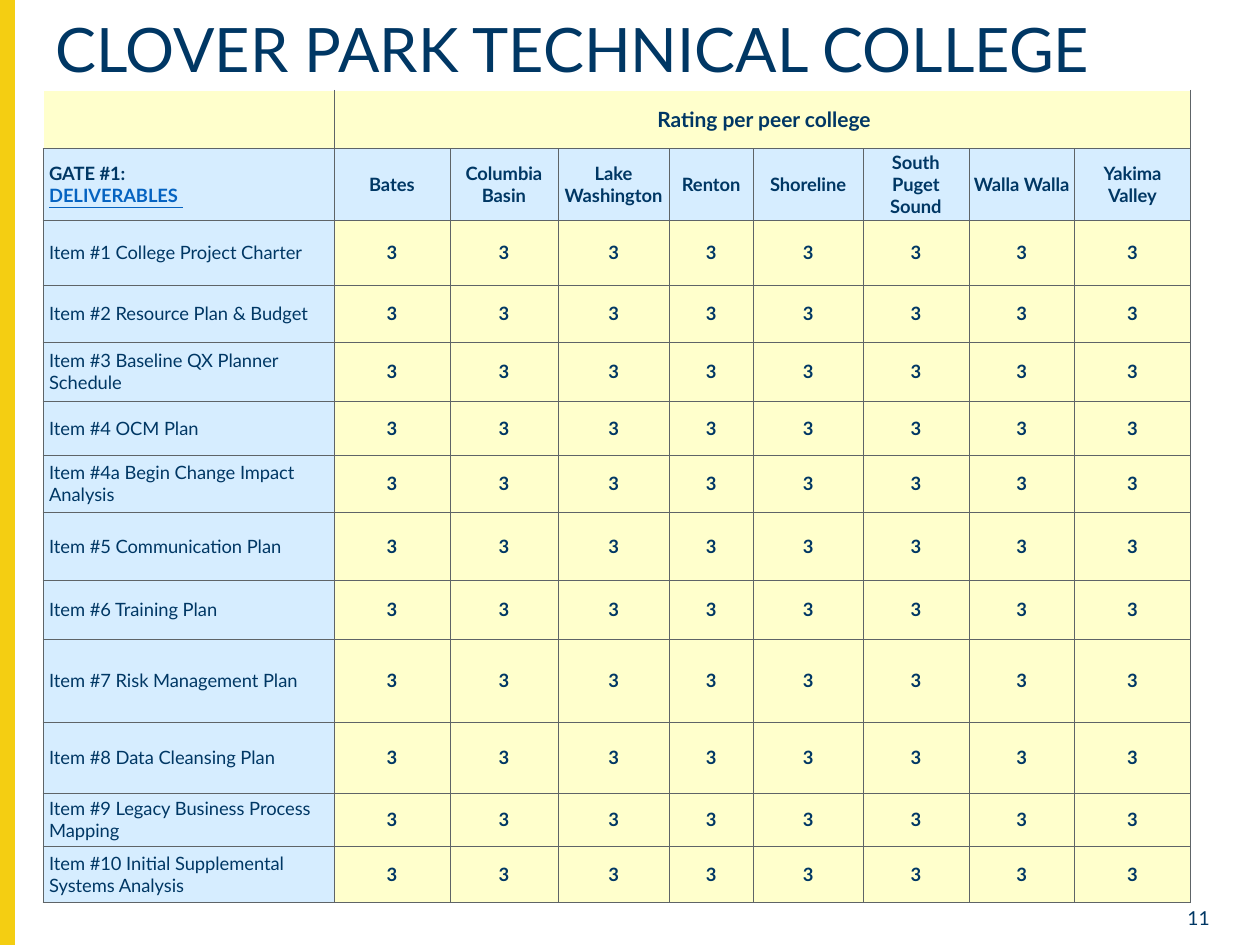
from lxml.etree import SubElement
from pptx import Presentation
from pptx.dml.color import RGBColor as RGB
from pptx.enum.shapes import MSO_SHAPE as Shape
from pptx.enum.text import MSO_ANCHOR as Anchor, PP_ALIGN as Align
from pptx.oxml.ns import qn
from pptx.util import Inches, Pt

COLORS = {"navy": "003764", "gold": "F4CE12", "cream": "FFFFCC", "sky": "D6EDFF",
          "link": "0563C1", "rule": "5E6467", "white": "FFFFFF"}

# Widths and heights in grid units: the slide is 100 columns by 75 rows.
COLUMNS = [23.1, 9.2, 8.6, 8.8, 6.7, 8.7, 8.4, 8.4, 9.2]
ROWS = [4.6, 5.6, 5.2, 4.5, 4.7, 4.3, 4.5, 5.4, 4.7, 6.6, 5.6, 4.2, 4.5]
COLLEGES = ["Bates", "Columbia Basin", "Lake Washington", "Renton", "Shoreline",
            "South Puget Sound", "Walla Walla", "Yakima Valley"]
DELIVERABLES = [
    "Item #1 College Project Charter", "Item #2 Resource Plan & Budget",
    "Item #3 Baseline QX Planner Schedule", "Item #4 OCM Plan",
    "Item #4a Begin Change Impact Analysis", "Item #5 Communication Plan",
    "Item #6 Training Plan", "Item #7 Risk Management Plan",
    "Item #8 Data Cleansing Plan", "Item #9 Legacy Business Process Mapping",
    "Item #10 Initial Supplemental Systems Analysis"]
RATING = "3"


def color(name):
    return RGB.from_string(COLORS[name])


class SlideBuilder:
    font = "Lato"
    unit = Inches(0.1)

    def __init__(self, slide):
        self.slide = slide

    def span(self, *units):
        return [round(u * self.unit) for u in units]

    def style(self, paragraph, size, align=Align.LEFT, bold=False):
        paragraph.alignment = align
        font = paragraph.font
        font.name, font.size, font.bold = self.font, Pt(size), bold
        font.color.rgb = color("navy")

    def bar(self, box, fill):
        bar = self.slide.shapes.add_shape(Shape.RECTANGLE, *self.span(*box))
        bar.shadow.inherit = False
        bar.fill.solid()
        bar.fill.fore_color.rgb = bar.line.color.rgb = color(fill)
        bar.line.width = Pt(1)

    def text(self, box, words, size, align=Align.LEFT, anchor=Anchor.TOP, inset=0, spacing=1):
        frame = self.slide.shapes.add_textbox(*self.span(*box)).text_frame
        frame.word_wrap = True
        frame.vertical_anchor = anchor
        frame.margin_top = frame.margin_bottom = Inches(inset)
        paragraph = frame.paragraphs[0]
        paragraph.text = words
        paragraph.line_spacing = spacing
        self.style(paragraph, size, align)

    def table(self, left, top, widths, heights):
        frame = self.slide.shapes.add_table(
            len(heights), len(widths), *self.span(left, top, sum(widths), sum(heights)))
        table = frame.table
        table.first_row = table.horz_banding = False
        for column, width in zip(table.columns, self.span(*widths)):
            column.width = width
        for row, height in zip(table.rows, self.span(*heights)):
            row.height = height
        return table

    def borders(self, cell, **sides):
        """Draw the four borders; sides maps L, R, T or B to a (colour, points) pair."""
        properties = cell._tc.get_or_add_tcPr()
        for side in "LRTB":
            name, width = sides.get(side, ("rule", 0.25))
            line = SubElement(properties, qn(f"a:ln{side}"), w=str(Pt(width)))
            SubElement(SubElement(line, qn("a:solidFill")), qn("a:srgbClr"), val=COLORS[name])

    def cell(self, cell, words, fill, size=10.5, label=False, bold=True, align=None, **sides):
        """Style one cell; a label has the left-hand insets and alignment."""
        self.borders(cell, **sides)
        cell.fill.solid()
        cell.fill.fore_color.rgb = color(fill)
        cell.vertical_anchor = Anchor.MIDDLE
        insets = (0.05, 0, 0.02, 0) if label else (0.03, 0.02, 0.03, 0.02)
        (cell.margin_left, cell.margin_top,
         cell.margin_right, cell.margin_bottom) = map(Inches, insets)
        paragraph = cell.text_frame.paragraphs[0]
        paragraph.text = words
        self.style(paragraph, size, align or (Align.LEFT if label else Align.CENTER), bold)
        return paragraph


def fill_ratings(builder, table):
    white = ("white", 1)
    builder.cell(table.cell(0, 0), "", "cream", label=True, L=white, T=white)
    for column in range(1, len(COLUMNS)):
        words = "Rating per peer college" if column == 1 else ""
        builder.cell(table.cell(0, column), words, "cream", 12, label=True,
                     align=Align.CENTER, T=white)
    table.cell(0, 1).merge(table.cell(0, len(COLUMNS) - 1))

    gate = builder.cell(table.cell(1, 0), "GATE #1:", "sky", label=True)
    gate.add_line_break()
    deliverables = gate.add_run()
    deliverables.text = "DELIVERABLES "
    deliverables.font.underline = True
    deliverables.font.color.rgb = color("link")
    for column, college in enumerate(COLLEGES, 1):
        builder.cell(table.cell(1, column), college, "sky")

    for row, deliverable in enumerate(DELIVERABLES, 2):
        builder.cell(table.cell(row, 0), deliverable, "sky", label=True, bold=False)
        for column in range(1, len(COLUMNS)):
            builder.cell(table.cell(row, column), RATING, "cream")


def main():
    deck = Presentation()
    deck.slide_width, deck.slide_height = Inches(10), Inches(7.5)
    builder = SlideBuilder(deck.slides.add_slide(deck.slide_layouts[6]))
    builder.bar((0, 0, 1.1, 75), "gold")
    builder.text((92, 71.4, 5, 2.1), "11", 11, Align.RIGHT, inset=0.05)
    builder.text((3.4, 1, 89.5, 5.8), "CLOVER PARK TECHNICAL COLLEGE", 35,
                 anchor=Anchor.BOTTOM, spacing=0.9)
    fill_ratings(builder, builder.table(3.4, 7.2, COLUMNS, ROWS))
    deck.save("out.pptx")


if __name__ == "__main__":
    main()
